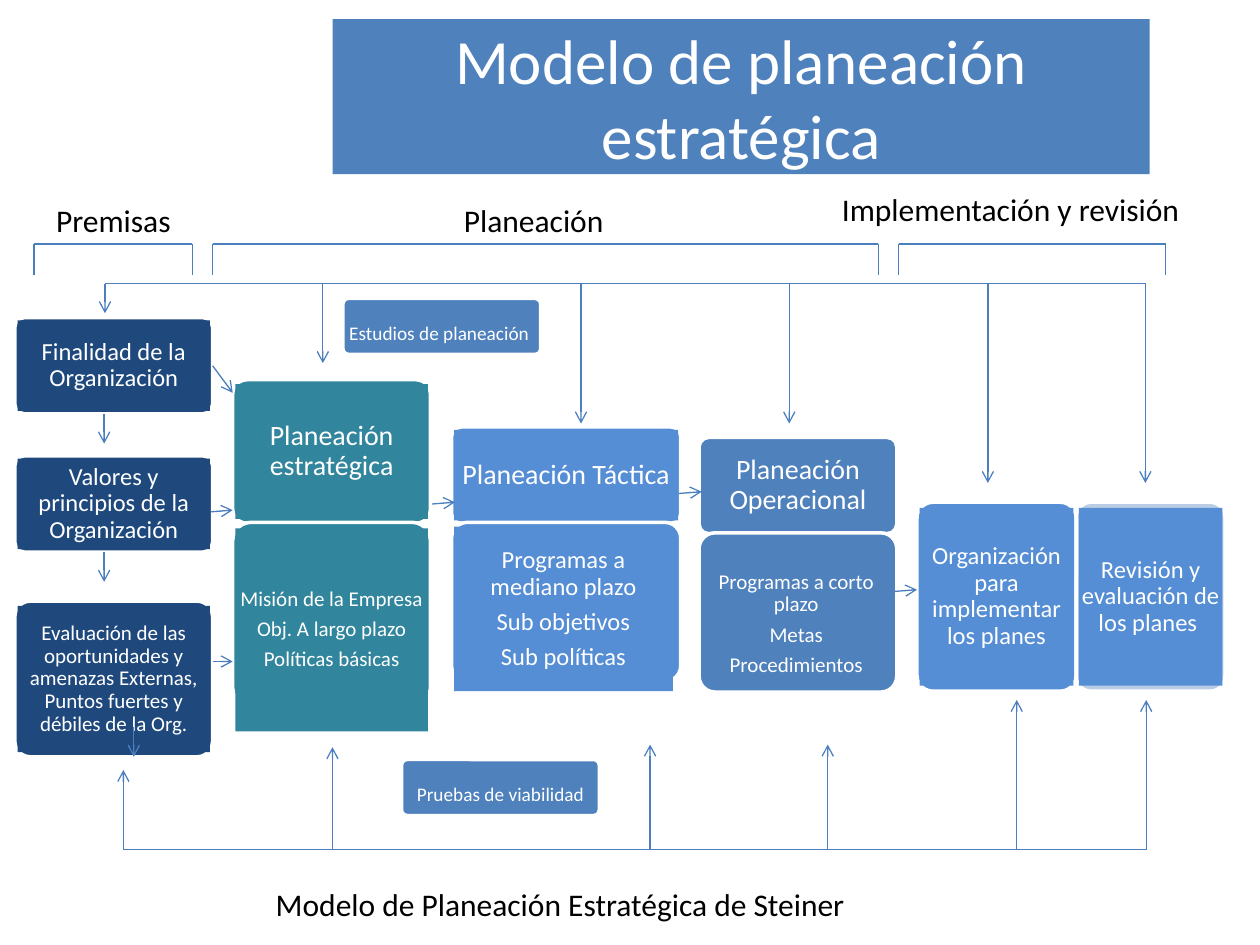
from lxml import etree
from pptx import Presentation
from pptx.dml import color
from pptx.enum import shapes, text
from pptx.oxml import ns
from pptx.util import Pt

NAVY, TEAL, BLUE, SKY, PALE = "1F497D", "31859C", "4F81BD", "558ED5", "B9CDE5"
WHITE, BLACK, LINE = "FFFFFF", "000000", "4B7EBC"
ROUNDED = shapes.MSO_SHAPE.ROUNDED_RECTANGLE
RECTANGLE = shapes.MSO_SHAPE.RECTANGLE


def paint(target, shade):
    if hasattr(target, "solid"):
        target.solid()
        target = target.fore_color
    target.rgb = color.RGBColor.from_string(shade)


def place(parent, kind, box, shade):
    shape = parent.add_shape(kind, *map(Pt, box))
    shape.shadow.inherit = False
    paint(shape.fill, shade)
    shape.line.fill.background()
    return shape


def write(shape, words, size, shade, align=None):
    frame = shape.text_frame
    frame.text = words
    for paragraph in frame.paragraphs:
        paragraph.alignment = align
        for span in paragraph.runs:
            span.font.name = "Calibri"
            span.font.size = Pt(size)
            paint(span.font.color, shade)
    return frame


def draw_title(page, box):
    banner = place(page.shapes, RECTANGLE, box, BLUE)
    frame = write(banner, "Modelo de planeación estratégica", 36, WHITE, text.PP_ALIGN.CENTER)
    frame.word_wrap = True
    frame.vertical_anchor = text.MSO_ANCHOR.MIDDLE


def draw_heading(page, box, words):
    heading = page.shapes.add_textbox(*map(Pt, box))
    frame = write(heading, words, 18, BLACK)
    frame.word_wrap = False
    frame.auto_size = text.MSO_AUTO_SIZE.SHAPE_TO_FIT_TEXT


def draw_block(page, box, words, size, shade, panel=None, label=None):
    left, top, width, height = box
    group = page.shapes.add_group_shape().shapes
    card = place(group, ROUNDED, box, shade)
    card.adjustments[0] = 0.1
    paint(card.line.fill, WHITE)
    card.line.width = Pt(2)

    gap = 0.03 * height
    dx, dy, label_width, label_height = label or (1.5, gap, width - 3, height - 2 * gap)
    area = (left + dx, top + dy, label_width, label_height)
    if panel:
        holder = place(group, RECTANGLE, area, panel)
    else:
        holder = group.add_textbox(*map(Pt, area))
    frame = write(holder, words, size, WHITE, text.PP_ALIGN.CENTER)
    frame.word_wrap = True
    frame.vertical_anchor = text.MSO_ANCHOR.MIDDLE
    frame.margin_left = frame.margin_right = Pt(1.5)
    frame.margin_top = frame.margin_bottom = Pt(1.5)
    for paragraph in frame.paragraphs:
        paragraph.line_spacing = 0.9
        paragraph.space_after = Pt(0.35 * size)
    return card


def draw_line(page, start, end, arrow=True):
    line = page.shapes.add_connector(shapes.MSO_CONNECTOR.STRAIGHT, *map(Pt, start + end))
    paint(line.line.fill, LINE)
    line.line.width = Pt(0.75)
    if arrow:
        etree.SubElement(line.line._get_or_add_ln(), ns.qn("a:tailEnd"), type="arrow")
    etree.SubElement(line._element.spPr, ns.qn("a:effectLst"))
    return line


def draw_bracket(page, box):
    left, top, width, height = box
    right = left + width
    draw_line(page, (left, top), (right, top), arrow=False)
    for x in (left, right):
        draw_line(page, (x, top + height), (x, top), arrow=False)


def draw_bus(page, left, right, level, branches):
    draw_line(page, (left, level), (right, level), arrow=False)
    for x, tip in branches:
        draw_line(page, (x, level), (x, tip))


def draw_premises(page, box):
    left, top, width = box
    stages = [
        (0, 55, "Finalidad de la Organización", 14),
        (79, 55, "Valores y principios de la Organización", 14),
        (162, 89, "Evaluación de las oportunidades y amenazas Externas, "
                  "Puntos fuertes y débiles de la Org.", 12),
    ]
    cards = [draw_block(page, (left, top + offset, width, height), words, size, NAVY, NAVY)
             for offset, height, words, size in stages]
    for offset in (55, 134):
        draw_line(page, (left + 51, top + offset), (left + 51, top + offset + 17))
    draw_line(page, (left + 68, top + 234), (left + 68, top + 251))
    return cards


def draw_plans(page, box):
    left, top = box
    draw_block(page, (left, top, 113, 82), "Planeación estratégica", 16, TEAL, TEAL)
    draw_block(page, (left, top + 81.5, 113, 105),
               "Misión de la Empresa\nObj. A largo plazo\nPolíticas básicas",
               12, TEAL, TEAL, (1.5, 3.5, 110, 116))
    draw_block(page, (left + 125, top + 27, 131, 55), "Planeación Táctica", 16, SKY, SKY)
    draw_block(page, (left + 125, top + 81.5, 131, 91),
               "Programas a mediano plazo\nSub objetivos\nSub políticas",
               14, SKY, SKY, (1.5, 2.5, 125, 94))
    draw_block(page, (left + 266.5, top + 33, 113, 55), "Planeación Operacional", 16, BLUE)
    draw_block(page, (left + 266.5, top + 87.5, 113, 91),
               "Programas a corto plazo\nMetas\nProcedimientos",
               12, BLUE, None, (1.5, 2, 108, 100))


def draw_studies(page):
    draw_block(page, (196, 170.5, 113, 32), "Estudios de planeación", 11, BLUE,
               None, (0, 9.5, 110, 21.5))
    draw_block(page, (229.5, 434, 113, 32), "Pruebas de viabilidad", 11, BLUE,
               None, (1.5, 9.5, 110, 21.5))


def draw_review(page, box):
    left, top, height = box
    draw_block(page, (left, top, 91, height), "Organización para implementar los planes",
               14, SKY, SKY)
    draw_block(page, (left + 91, top, 85, height), "Revisión y evaluación de los planes ",
               14, PALE, SKY)


def main():
    deck = Presentation()
    deck.slide_width, deck.slide_height = Pt(720), Pt(540)
    page = deck.slides.add_slide(deck.slide_layouts[6])

    draw_title(page, (190, 11, 467, 88.5))
    purpose = draw_premises(page, (8.5, 181.5, 113))[0]
    draw_plans(page, (133, 217))
    draw_studies(page)
    draw_review(page, (524, 287, 108))

    draw_bus(page, 60, 655, 162, [(60, 179), (184.5, 207.5), (332, 242), (451, 242),
                                  (564.5, 276), (654.5, 276)])
    draw_bus(page, 70.5, 655, 485.5, [(70.5, 440), (190, 427), (371.5, 425.5), (473, 425.5),
                                      (581, 400), (655, 400)])

    draw_line(page, (121.5, 209), (133, 224.5)).begin_connect(purpose, 3)
    for start, end in [((120.5, 292.5), (133, 291.5)), ((121.5, 378), (133, 378)),
                       ((247, 288), (260, 287)), ((388, 282), (401, 281)),
                       ((511, 338), (524, 337))]:
        draw_line(page, start, end)

    for left, width in [(19.5, 90.5), (121.5, 380.5), (513.5, 152.5)]:
        draw_bracket(page, (left, 139.5, width, 17.5))
    for box, words in [((25, 111.5, 81, 29), "Premisas"),
                       ((258, 111.5, 95, 29), "Planeación"),
                       ((474, 105, 209.5, 29), "Implementación y revisión"),
                       ((150.5, 502, 343.5, 29), "Modelo de Planeación Estratégica de Steiner")]:
        draw_heading(page, box, words)

    deck.save("out.pptx")


if __name__ == "__main__":
    main()
